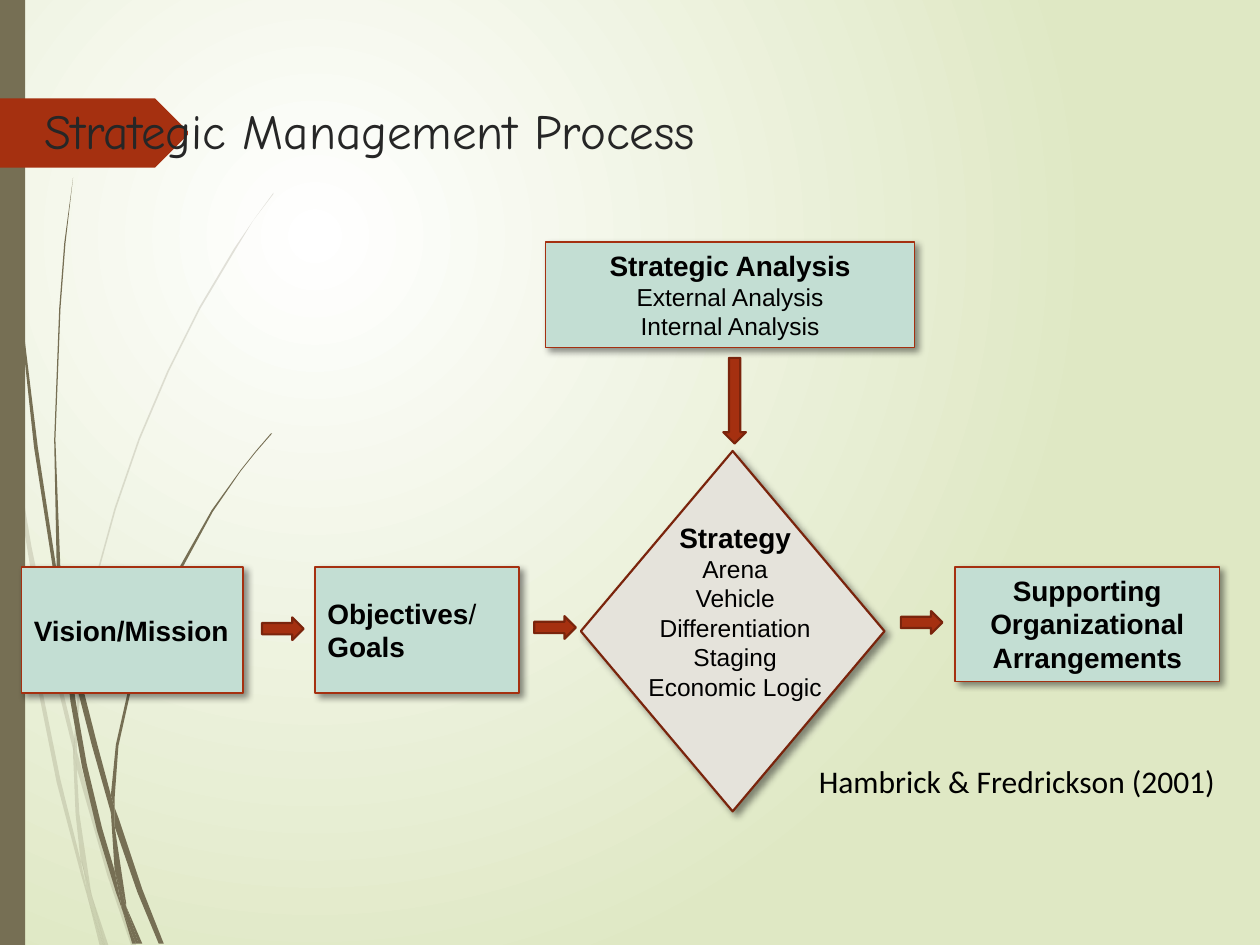
"""Build the Strategic Management Process slide."""
from dataclasses import dataclass

from lxml import etree
from pptx import Presentation
from pptx.dml.color import RGBColor
from pptx.enum.shapes import MSO_SHAPE
from pptx.enum.text import MSO_ANCHOR, PP_ALIGN
from pptx.oxml.ns import qn
from pptx.util import Inches, Pt

RECTANGLE, DIAMOND, ARROW = MSO_SHAPE.RECTANGLE, MSO_SHAPE.DIAMOND, MSO_SHAPE.RIGHT_ARROW
LEFT, CENTER = PP_ALIGN.LEFT, PP_ALIGN.CENTER
TOP, MIDDLE = MSO_ANCHOR.TOP, MSO_ANCHOR.MIDDLE
COLORS = {
    "white": "FFFFFF", "meadow": "DFE8C4", "stalk": "766F54", "rust": "A53010",
    "dark rust": "7A240C", "mint": "C3DED3", "sand": "E5E3DB",
    "title": "262626", "black": "000000",
}
HEADING = {"name": "Arial", "size": Pt(16), "bold": True}
DETAIL = {"name": "Arial", "size": Pt(14), "bold": False}
SLASH = {**HEADING, "bold": False}
CITATION = {"name": "Calibri", "size": Pt(18)}
TITLE = {"name": "Comic Neue", "size": Pt(28)}


@dataclass
class Box:
    """A rectangle in inches with paragraphs of (text, format) runs."""
    left: float
    top: float
    width: float
    height: float
    paragraphs: list
    align: int = CENTER
    anchor: int = TOP


@dataclass
class Arrow:
    """A block arrow in inches."""
    left: float
    top: float
    width: float = 0.33
    rotation: int = 0


PALE_STALKS = [
    [(0.08, 3.5), (0.06, 3.22), (0, 2.82), (0, 2.99), (0.07, 3.44)],
    [(0.4, 5.22), (0.59, 5.99), (0.59, 5.86), (0.43, 5.2), (0.25, 4.34), (0.1, 3.45),
     (0.12, 3.76), (0.24, 4.5)],
    [(0.64, 6.07), (0.61, 5.96), (0.61, 6.1), (0.85, 6.94), (1.04, 7.5), (1.08, 7.5),
     (0.88, 6.92)],
    [(0.83, 7.5), (0.86, 7.5), (0.73, 7.11)],
    [(0.64, 6.83), (0.48, 6.19), (0.33, 5.45), (0.22, 4.69), (0.12, 3.76), (0.08, 3.5),
     (0.19, 4.7), (0.3, 5.46), (0.45, 6.21), (0.64, 6.93), (0.7, 7.14), (0.69, 7.07)],
    [(0.58, 5.99), (0.6, 6.46), (0.64, 6.83), (0.73, 7.11), (0.72, 7.06), (0.63, 6.46),
     (0.61, 6.1), (0.61, 6.08)],
    [(0.61, 5.84), (0.66, 5.22), (0.76, 4.62), (0.92, 4.04), (1.11, 3.49), (1.34, 2.95),
     (1.59, 2.45), (1.87, 1.98), (2.01, 1.75), (2.17, 1.54), (2.17, 1.53), (2.01, 1.75),
     (1.86, 1.97), (1.58, 2.44), (1.33, 2.94), (1.1, 3.48), (0.91, 4.03), (0.75, 4.61),
     (0.64, 5.22), (0.59, 5.84), (0.59, 5.86), (0.61, 5.96)],
    [(0.7, 7.14), (0.79, 7.5), (0.82, 7.5)],
    [(0.61, 6.08), (0.61, 5.96), (0.59, 5.86), (0.58, 5.99)],
    [(0.67, 6.92), (0.65, 6.83), (0.69, 7.07), (0.7, 7.14), (0.82, 7.5), (0.83, 7.5),
     (0.73, 7.11)],
]
DARK_STALKS = [
    [(0.05, 1.1), (0.14, 2.33), (0.27, 3.55), (0.46, 4.77), (0.47, 4.81), (0.45, 4.53),
     (0.3, 3.55), (0.15, 2.32), (0.06, 1.09), (0.04, 0.48), (0.03, 0), (0.02, 0),
     (0.03, 0.48)],
    [(0.73, 5.92), (0.88, 6.45), (0.88, 6.31), (0.77, 5.9), (0.62, 5.31), (0.5, 4.72),
     (0.53, 5.05), (0.62, 5.49)],
    [(0.94, 6.49), (0.91, 6.41), (0.91, 6.56), (1.09, 7.08), (1.26, 7.49), (1.3, 7.49),
     (1.13, 7.06)],
    [(0.91, 6.91), (0.81, 6.57), (0.69, 6.07), (0.6, 5.56), (0.53, 5.05), (0.47, 4.77),
     (0.56, 5.57), (0.65, 6.08), (0.77, 6.59), (0.92, 7.08), (0.97, 7.22), (0.96, 7.17)],
    [(0.5, 4.72), (0.48, 4.53), (0.44, 3.49), (0.48, 2.45), (0.52, 1.93), (0.58, 1.41),
     (0.51, 1.93), (0.47, 2.45), (0.43, 3.49), (0.45, 4.49), (0.49, 4.72)],
    [(1.1, 7.49), (1.13, 7.49), (1, 7.19)],
    [(0.47, 4.77), (0.53, 5.05), (0.5, 4.72), (0.49, 4.72), (0.45, 4.49), (0.45, 4.53)],
    [(0.91, 6.33), (0.94, 5.92), (1.03, 5.52), (1.16, 5.13), (1.31, 4.76), (1.69, 4.06),
     (1.91, 3.74), (2.03, 3.59), (2.16, 3.44), (2.15, 3.44), (2.03, 3.58), (1.91, 3.73),
     (1.68, 4.05), (1.29, 4.74), (1.13, 5.12), (1.01, 5.51), (0.92, 5.91), (0.88, 6.31),
     (0.91, 6.41)],
    [(0.97, 7.22), (1.05, 7.49), (1.08, 7.49)],
    [(0.88, 6.45), (0.91, 6.91), (1, 7.19), (1, 7.16), (0.91, 6.56), (0.9, 6.51)],
    [(0.88, 6.45), (0.91, 6.56), (0.91, 6.41), (0.88, 6.31)],
    [(0.96, 7.06), (0.91, 6.91), (0.96, 7.17), (0.97, 7.22), (1.08, 7.49), (1.1, 7.49),
     (1, 7.19)],
]
TITLE_TAG = [(0, 0.78), (1.23, 0.78), (1.49, 1.04), (1.49, 1.07), (1.23, 1.33), (0, 1.33)]
BOXES = [
    Box(0.17, 4.5, 1.76, 1, [[("Vision/Mission", HEADING)]], LEFT, MIDDLE),
    Box(2.5, 4.5, 1.62, 1,
        [[("Objectives", HEADING), ("/", SLASH), ("Goals", HEADING)]], LEFT, MIDDLE),
    Box(4.33, 1.92, 2.93, 0.84, [[("Strategic Analysis", HEADING)],
                                 [("External Analysis", DETAIL)],
                                 [("Internal Analysis", DETAIL)]]),
    Box(7.58, 4.5, 2.1, 0.91, [[("Supporting Organizational Arrangements", HEADING)]]),
]
STRATEGY_PARTS = ["Arena", "Vehicle", "Differentiation", "Staging", "Economic Logic"]
LABELS = [
    Box(4.67, 4.08, 2.33, 1.55,
        [[("Strategy", HEADING)], *([(part, DETAIL)] for part in STRATEGY_PARTS)]),
    Box(6.4, 6, 3.58, 0.42, [[("Hambrick & Fredrickson (2001)", CITATION)]], LEFT),
]
ARROWS = [Arrow(2.08, 4.9), Arrow(4.24, 4.89), Arrow(7.15, 4.85), Arrow(5.49, 3.09, 0.68, 90)]


def rgb(name: str) -> RGBColor:
    return RGBColor.from_string(COLORS[name])


def add_alpha(color_element, percent: int) -> None:
    etree.SubElement(color_element, qn("a:alpha"), val=str(percent * 1000))


def paint(shape, fill: str, line: str = "", width: float = 0) -> None:
    shape.shadow.inherit = False
    shape.fill.solid()
    shape.fill.fore_color.rgb = rgb(fill)
    if line:
        shape.line.color.rgb = rgb(line)
        shape.line.width = Pt(width)
    else:
        shape.line.fill.background()


def add_shadow(shape) -> None:
    effects = shape.element.spPr.find(qn("a:effectLst"))
    shadow = etree.SubElement(effects, qn("a:outerShdw"), blurRad=str(Pt(4)),
                              dist=str(Pt(3)), dir=str(45 * 60000), rotWithShape="0")
    add_alpha(etree.SubElement(shadow, qn("a:srgbClr"), val=COLORS["black"]), 43)


def add_preset(slide, kind, left: float, top: float, width: float, height: float):
    return slide.shapes.add_shape(kind, *map(Inches, (left, top, width, height)))


def add_outline(slide, points: list, fill: str, alpha: int = 100) -> None:
    corners = [(Inches(x), Inches(y)) for x, y in points]
    builder = slide.shapes.build_freeform(*corners[0])
    builder.add_line_segments(corners[1:], close=True)
    shape = builder.convert_to_shape()
    paint(shape, fill)
    if alpha < 100:
        add_alpha(shape.element.spPr.find(".//" + qn("a:srgbClr")), alpha)


def write(shape, box: Box, color: str = "black") -> None:
    frame = shape.text_frame
    frame.word_wrap = True
    frame.vertical_anchor = box.anchor
    for index, runs in enumerate(box.paragraphs):
        paragraph = frame.add_paragraph() if index else frame.paragraphs[0]
        paragraph.alignment = box.align
        for text, style in runs:
            run = paragraph.add_run()
            run.text = text
            run.font.color.rgb = rgb(color)
            for name, value in style.items():
                setattr(run.font, name, value)


def set_background(slide) -> None:
    fill = slide.background.fill
    fill.gradient()
    for stop, name, position in zip(fill.gradient_stops, ("white", "meadow"), (0, 1)):
        stop.color.rgb = rgb(name)
        stop.position = position
    gradient = slide.element.find(".//" + qn("a:gradFill"))
    gradient.remove(gradient.find(qn("a:lin")))
    path = etree.SubElement(gradient, qn("a:path"), path="circle")
    etree.SubElement(path, qn("a:fillToRect"), l="50000", t="50000", r="100000", b="100000")


def main() -> None:
    presentation = Presentation()
    presentation.slide_width, presentation.slide_height = Inches(10), Inches(7.5)
    slide = presentation.slides.add_slide(presentation.slide_layouts[5])
    set_background(slide)
    for stalks, alpha in ((PALE_STALKS, 20), (DARK_STALKS, 100)):
        for points in stalks:
            add_outline(slide, points, "stalk", alpha)
    paint(add_preset(slide, RECTANGLE, 0, 0, 0.2, 7.5), "stalk")
    add_outline(slide, TITLE_TAG, "rust")

    title = slide.shapes.title
    slide.shapes.element.append(title.element)
    heading = Box(0.25, 0.75, 9, 0.87, [[("Strategic Management Process", TITLE)]], LEFT)
    for side in ("left", "top", "width", "height"):
        setattr(title, side, Inches(getattr(heading, side)))
    write(title, heading, "title")

    diamond = add_preset(slide, DIAMOND, 4.61, 3.58, 2.41, 2.86)
    paint(diamond, "sand", "dark rust", 1.25)
    add_shadow(diamond)
    for box in BOXES:
        shape = add_preset(slide, RECTANGLE, box.left, box.top, box.width, box.height)
        paint(shape, "mint", "rust", 0.75)
        add_shadow(shape)
        write(shape, box)
    for arrow in ARROWS:
        shape = add_preset(slide, ARROW, arrow.left, arrow.top, arrow.width, 0.18)
        shape.rotation = arrow.rotation
        paint(shape, "rust", "dark rust", 1.25)
    for label in LABELS:
        sides = map(Inches, (label.left, label.top, label.width, label.height))
        write(slide.shapes.add_textbox(*sides), label)
    presentation.save("out.pptx")


if __name__ == "__main__":
    main()
